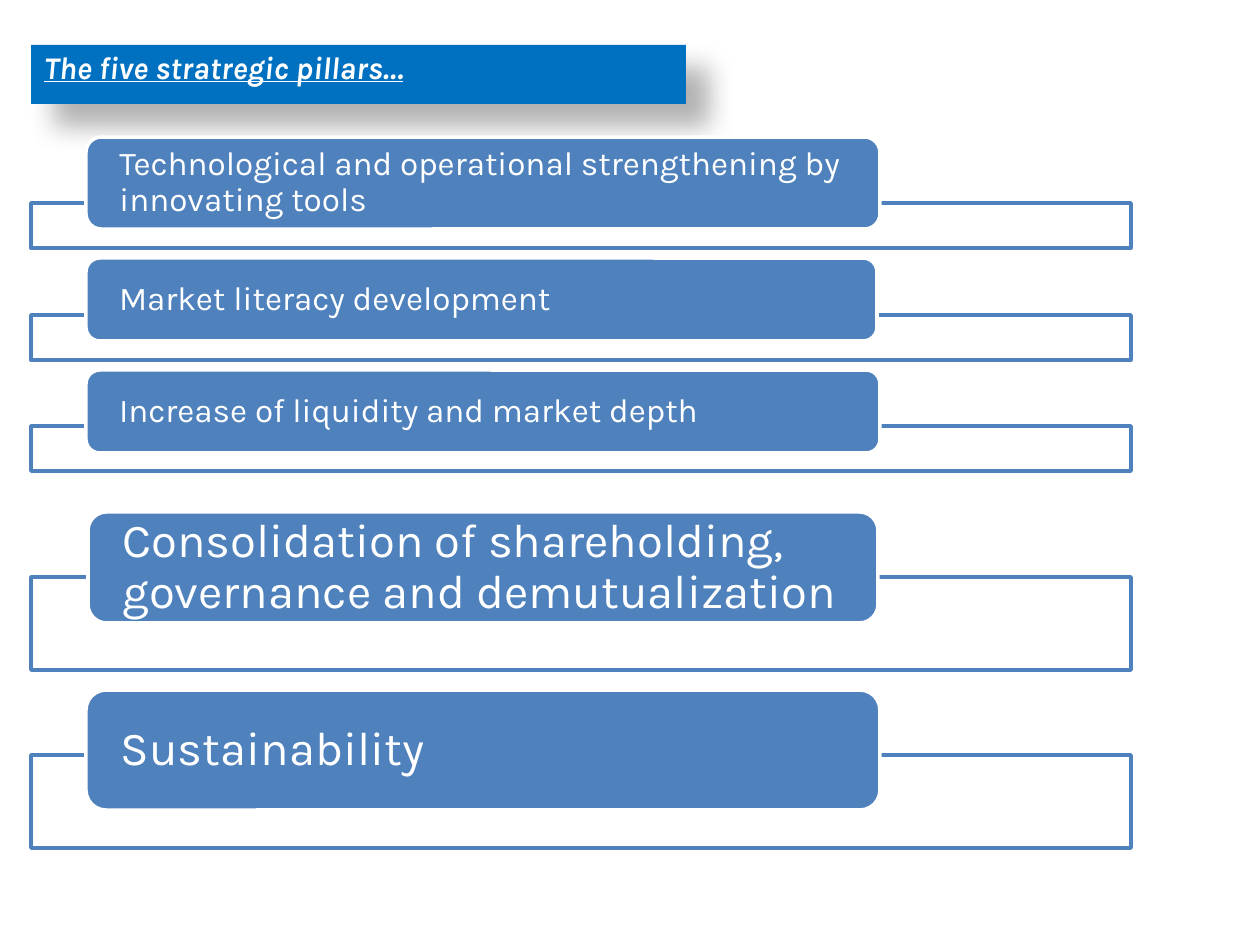
from dataclasses import dataclass

from lxml.etree import SubElement
from pptx import Presentation
from pptx.dml.color import RGBColor
from pptx.enum.shapes import MSO_SHAPE
from pptx.enum.text import MSO_ANCHOR, MSO_AUTO_SIZE, PP_ALIGN
from pptx.oxml.ns import qn
from pptx.shapes.autoshape import Shape
from pptx.slide import Slide
from pptx.text.text import TextFrame
from pptx.util import Emu, Pt

PIXELS_PER_INCH = 126
FONT = "Karla"
COLOURS = {"banner": "0070C0", "pillar": "4F81BD", "white": "FFFFFF", "shadow": "000000"}
FRAME_LEFT, FRAME_WIDTH = 31, 1100


@dataclass(frozen=True)
class Box:
    left: int
    top: int
    width: int
    height: int


@dataclass(frozen=True)
class Pillar:
    text: str
    card: Box
    frame_top: int
    frame_height: int
    font_size: int


PILLARS = [
    Pillar("Technological and operational strengthening by innovating tools",
           Box(86, 137, 794, 92), 203, 45, 19),
    Pillar("Market literacy development", Box(86, 258, 791, 83), 315, 45, 19),
    Pillar("Increase of liquidity and market depth", Box(86, 370, 794, 83), 426, 45, 19),
    Pillar("Consolidation of shareholding, governance and demutualization",
           Box(88, 512, 790, 111), 577, 93, 27),
    Pillar("Sustainability", Box(86, 690, 794, 120), 755, 93, 27),
]


def px(length: int) -> Emu:
    return Emu(round(length * 914400 / PIXELS_PER_INCH))


def colour(name: str) -> RGBColor:
    return RGBColor.from_string(COLOURS[name])


def place(shape: Shape, box: Box) -> None:
    shape.left, shape.top = px(box.left), px(box.top)
    shape.width, shape.height = px(box.width), px(box.height)


def paint(shape: Shape, fill: str) -> None:
    shape.fill.solid()
    shape.fill.fore_color.rgb = colour(fill)


def write(text_frame: TextFrame, text: str, size: int, side: int, bottom: int = 0) -> None:
    text_frame.text = text
    text_frame.word_wrap = True
    text_frame.auto_size = MSO_AUTO_SIZE.NONE
    text_frame.vertical_anchor = MSO_ANCHOR.MIDDLE
    text_frame.margin_left = text_frame.margin_right = px(side)
    text_frame.margin_top, text_frame.margin_bottom = 0, px(bottom)
    paragraph = text_frame.paragraphs[0]
    paragraph.alignment = PP_ALIGN.LEFT
    paragraph.font.name = FONT
    paragraph.font.size = Pt(size)
    paragraph.font.color.rgb = colour("white")


def add_shadow(shape: Shape) -> None:
    effects = SubElement(shape.element.spPr, qn("a:effectLst"))
    shadow = SubElement(effects, qn("a:outerShdw"), blurRad=str(Pt(15)), dist=str(Pt(18)),
                        dir="2700000", algn="tl", rotWithShape="0")
    shade = SubElement(shadow, qn("a:srgbClr"), val=COLOURS["shadow"])
    SubElement(shade, qn("a:alpha"), val="30000")


def format_title(title: Shape) -> None:
    place(title, Box(31, 45, 655, 59))
    paint(title, "banner")
    add_shadow(title)
    write(title.text_frame, "The five stratregic pillars…", 18, 13, 15)
    paragraph = title.text_frame.paragraphs[0]
    paragraph.font.bold = paragraph.font.italic = paragraph.font.underline = True
    properties = paragraph._p.get_or_add_pPr()
    properties.set("marL", str(px(39)))
    properties.set("indent", str(-px(39)))


def add_block(slide: Slide, kind: MSO_SHAPE, box: Box, fill: str, line: str) -> Shape:
    shape = slide.shapes.add_shape(kind, 0, 0, 0, 0)
    place(shape, box)
    paint(shape, fill)
    shape.line.color.rgb = colour(line)
    shape.line.width = Pt(2)
    shape.shadow.inherit = False
    return shape


def add_pillar(slide: Slide, pillar: Pillar) -> None:
    frame_box = Box(FRAME_LEFT, pillar.frame_top, FRAME_WIDTH, pillar.frame_height)
    frame = add_block(slide, MSO_SHAPE.RECTANGLE, frame_box, "white", "pillar")
    fill_colour = frame.element.spPr.find(qn("a:solidFill")).find(qn("a:srgbClr"))
    SubElement(fill_colour, qn("a:alpha"), val="90000")
    card = add_block(slide, MSO_SHAPE.ROUNDED_RECTANGLE, pillar.card, "pillar", "white")
    write(card.text_frame, pillar.text, pillar.font_size, 29)
    card.text_frame.paragraphs[0].line_spacing = 0.9


def main() -> None:
    presentation = Presentation()
    presentation.slide_width, presentation.slide_height = px(1260), px(945)
    slide = presentation.slides.add_slide(presentation.slide_layouts[5])
    format_title(slide.shapes.title)
    for pillar in PILLARS:
        add_pillar(slide, pillar)
    presentation.save("out.pptx")


if __name__ == "__main__":
    main()
